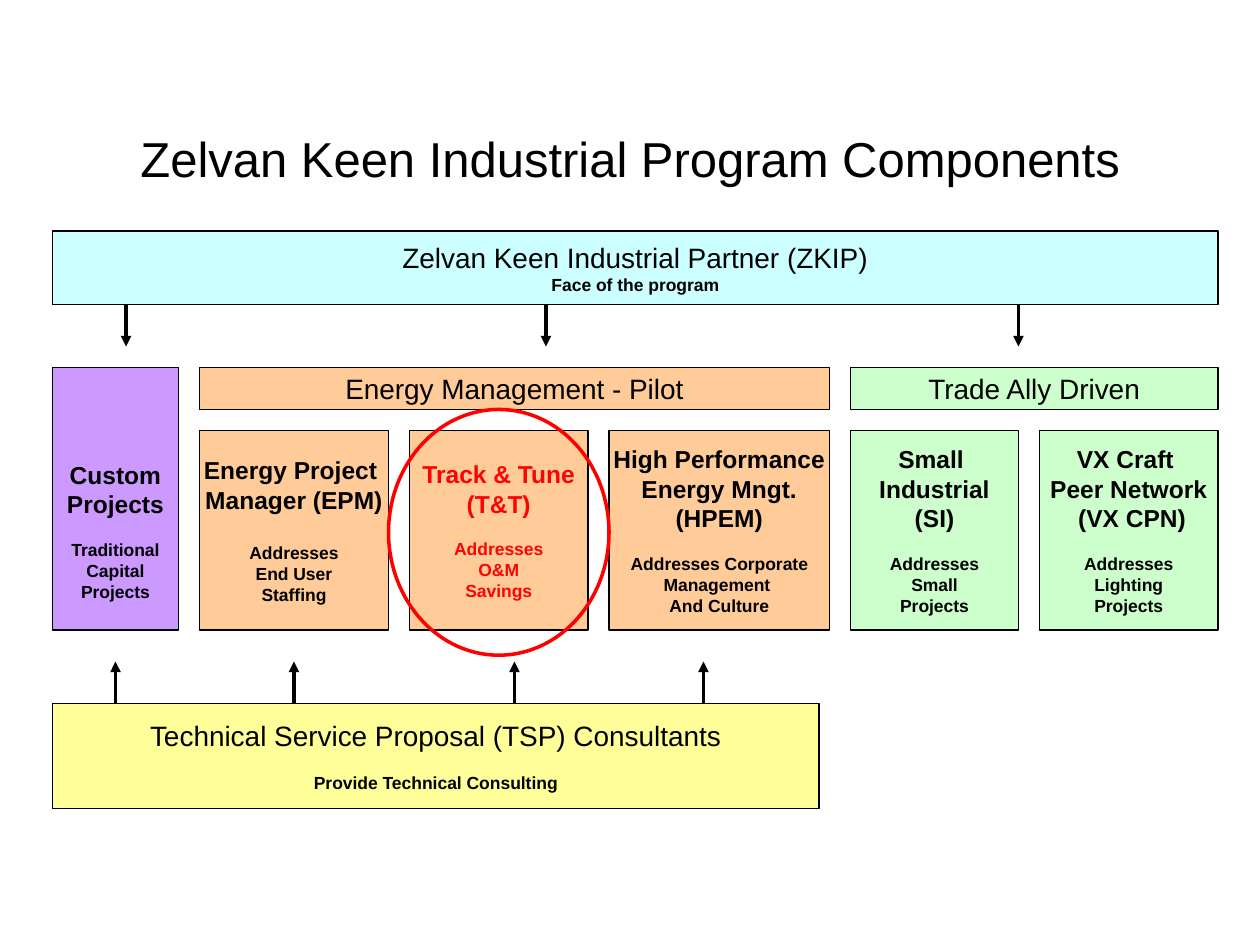
"""Build the Zelvan Keen Industrial program components slide."""
from typing import Any, NamedTuple

from lxml.etree import SubElement as Sub
from pptx import Presentation as Deck
from pptx.dml.color import RGBColor as Rgb
from pptx.enum.shapes import MSO_CONNECTOR as Link, MSO_SHAPE as Form
from pptx.enum.text import MSO_ANCHOR as Anchor, MSO_AUTO_SIZE as Fit, PP_ALIGN as Align
from pptx.oxml.ns import qn
from pptx.util import Pt

BLACK, RED, ALERT = "000000", "FD0303", "FF0000"
PEACH, GREEN, LILAC = "FFCC99", "CCFFCC", "CC99FF"
AQUA, YELLOW = "CCFFFF", "FFFF99"
LEFT, RIGHT, GAP = 30, 696, 12
ROW, CARD, BASE = 210, 246, 360
PILOT, TRADE = 114, 486
TOP, FOOT, REACH = 174, 402, 24


class Box(NamedTuple):
    x: float
    y: float
    w: float
    h: float
    fill: str
    head: str
    note: str = ""
    size: float = 14
    bold: bool = True
    gap: float = 11.5
    ink: str = BLACK
    inset: float = 3.6


class Arrow(NamedTuple):
    x: float
    start: float
    end: float


def tint(code: str) -> Rgb:
    return Rgb.from_string(code)


def write(para: Any, text: str, size: float, bold: bool, ink: str) -> None:
    para.alignment = Align.CENTER
    run = para.add_run()
    run.text = text
    font = run.font
    font.name, font.size, font.bold = "Arial", Pt(size), bold
    font.color.rgb = tint(ink)


def edge(line: Any, ink: str, width: float) -> None:
    line.color.rgb = tint(ink)
    line.width = Pt(width)


def draw_box(slide: Any, box: Box) -> None:
    shape = slide.shapes.add_shape(
        Form.RECTANGLE, Pt(box.x), Pt(box.y), Pt(box.w), Pt(box.h))
    shape.shadow.inherit = False
    shape.fill.solid()
    shape.fill.fore_color.rgb = tint(box.fill)
    edge(shape.line, BLACK, 0.75)
    frame = shape.text_frame
    frame.word_wrap = False
    frame.vertical_anchor = Anchor.MIDDLE
    frame.margin_top = Pt(box.inset)
    heads = box.head.split("\n")
    notes = box.note.split("\n") if box.note else []
    for i, text in enumerate(heads + notes):
        para = frame.add_paragraph() if i else frame.paragraphs[0]
        if i == len(heads):
            para.space_before = Pt(box.gap)
        if i < len(heads):
            write(para, text, box.size, box.bold, box.ink)
        else:
            write(para, text, 10, True, box.ink)


def draw_arrow(slide: Any, arrow: Arrow) -> None:
    line = slide.shapes.add_connector(
        Link.STRAIGHT, Pt(arrow.x), Pt(arrow.start), Pt(arrow.x), Pt(arrow.end))
    edge(line.line, BLACK, 2)
    props = line.element.spPr
    Sub(props.find(qn("a:ln")), qn("a:tailEnd"), type="triangle")
    Sub(props, qn("a:effectLst"))


def draw_ring(slide: Any) -> None:
    ring = slide.shapes.add_shape(Form.OVAL, Pt(222), Pt(234), Pt(126), Pt(140.4))
    ring.shadow.inherit = False
    ring.fill.background()
    edge(ring.line, ALERT, 2)


def draw_title(slide: Any) -> None:
    title = slide.shapes.title
    title.left, title.top, title.width, title.height = Pt(54), Pt(54), Pt(612), Pt(72)
    frame = title.text_frame
    frame.auto_size = Fit.NONE
    frame.vertical_anchor = Anchor.MIDDLE
    write(frame.paragraphs[0], "Zelvan Keen Industrial Program Components",
          28, False, BLACK)


def band(x: float, y: float, w: float, h: float, fill: str, head: str,
         note: str = "", gap: float = 0) -> Box:
    return Box(x, y, w, h, fill, head, note, size=16, bold=False, gap=gap)


def cards(x: float, fill: str, items: list[tuple[float, str, str, float, str]]) -> list[Box]:
    row = []
    for w, head, note, gap, ink in items:
        row.append(Box(x, CARD, w, BASE - CARD, fill, head, note, gap=gap, ink=ink))
        x += w + GAP
    return row


def main() -> None:
    deck = Deck()
    deck.slide_width, deck.slide_height = Pt(720), Pt(540)
    slide = deck.slides.add_slide(deck.slide_layouts.get_by_name("Title Only"))
    draw_title(slide)
    boxes = [
        band(PILOT, ROW, 360, 24, PEACH, "Energy Management - Pilot"),
        *cards(PILOT, PEACH, [
            (108, "Energy Project \nManager (EPM)", "Addresses\nEnd User\nStaffing", 16, BLACK),
            (102, "Track & Tune\n(T&T)", "Addresses\nO&M\nSavings", 11.5, RED),
            (126, "High Performance\nEnergy Mngt.\n(HPEM)",
             "Addresses Corporate\nManagement \nAnd Culture", 11.5, BLACK),
        ]),
        band(TRADE, ROW, RIGHT - TRADE, 24, GREEN, "Trade Ally Driven"),
        *cards(TRADE, GREEN, [
            (96, "Small \nIndustrial\n(SI)", "Addresses\nSmall\nProjects", 11.5, BLACK),
            (102, "VX Craft \nPeer Network\n (VX CPN)",
             "Addresses\nLighting\nProjects", 11.5, BLACK),
        ]),
        band(LEFT, FOOT, 438, 60, YELLOW, "Technical Service Proposal (TSP) Consultants",
             "Provide Technical Consulting", 11.5),
        band(LEFT, 132, RIGHT - LEFT, 42, AQUA, "Zelvan Keen Industrial Partner (ZKIP)",
             "Face of the program"),
        Box(LEFT, ROW, 72, BASE - ROW, LILAC, "Custom\nProjects",
            "Traditional\nCapital\nProjects", inset=40.4),
    ]
    for box in boxes:
        draw_box(slide, box)
    downs = [Arrow(x, TOP, TOP + REACH) for x in (72, 312, 582)]
    ups = [Arrow(x, FOOT, FOOT - REACH) for x in (66, 168, 294, 402)]
    for arrow in downs + ups:
        draw_arrow(slide, arrow)
    draw_ring(slide)
    deck.save("out.pptx")


if __name__ == "__main__":
    main()
